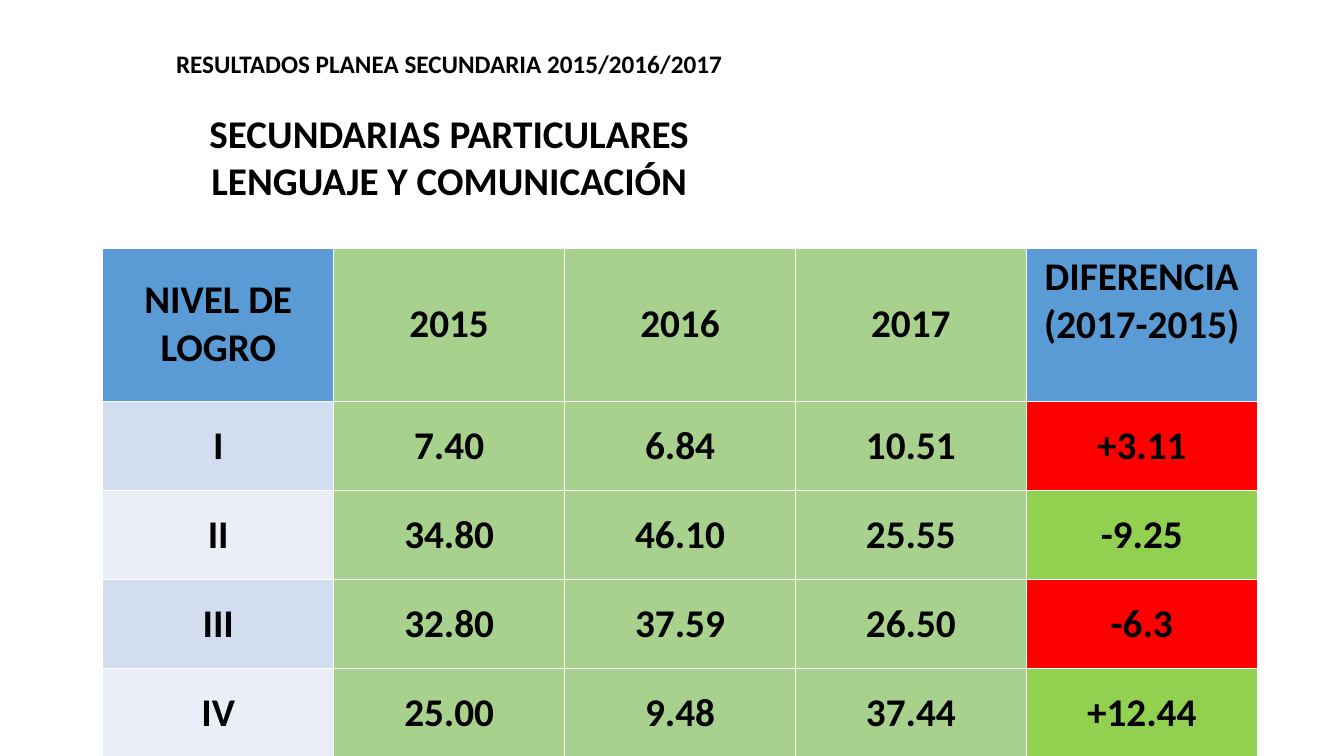
from pptx import Presentation
from pptx import util as u
from pptx.dml.color import RGBColor
from pptx.enum import text

SLIDE_W, SLIDE_H = u.Inches(13.33), u.Inches(7.5)
LEFT = u.Inches(1.02)
COLUMN_W = u.Inches(2.29)
HEADER_H, LEVEL_H = u.Inches(1.52), u.Inches(0.885)

BLACK = RGBColor(0x00, 0x00, 0x00)
BLUE = RGBColor(0x5B, 0x9B, 0xD5)
BANDS = RGBColor(0xD2, 0xDE, 0xEF), RGBColor(0xEA, 0xEF, 0xF7)
YEAR_GREEN = RGBColor(0xA9, 0xD1, 0x8E)
BETTER = RGBColor(0x92, 0xD0, 0x50)
WORSE = RGBColor(0xFF, 0x00, 0x00)

HEADING = [
    ("RESULTADOS PLANEA SECUNDARIA 2015/2016/2017", 18),
    ("SECUNDARIAS PARTICULARES", 28),
    ("LENGUAJE Y COMUNICACIÓN", 28),
]
HEADER = ["NIVEL DE LOGRO", "2015", "2016", "2017", "DIFERENCIA\n(2017-2015)"]
LEVELS = [
    (["I", "7.40", "6.84", "10.51", "+3.11"], WORSE),
    (["II", "34.80", "46.10", "25.55", "-9.25"], BETTER),
    (["III", "32.80", "37.59", "26.50", "-6.3"], WORSE),
    (["IV", "25.00", "9.48", "37.44", "+12.44"], BETTER),
]


def format_line(paragraph, size):
    paragraph.alignment = text.PP_ALIGN.CENTER
    for run in paragraph.runs:
        run.font.name = "Calibri"
        run.font.size = u.Pt(size)
        run.font.bold = True
        run.font.color.rgb = BLACK


def place_heading(slide):
    heading = slide.shapes.title
    heading.left, heading.top = LEFT, u.Inches(0.43)
    heading.width, heading.height = 3 * COLUMN_W, u.Inches(1.65)
    frame = heading.text_frame
    frame.text = "\n".join(line for line, _ in HEADING)
    frame.word_wrap = True
    frame.auto_size = text.MSO_AUTO_SIZE.NONE
    frame.vertical_anchor = text.MSO_ANCHOR.TOP
    for paragraph, (_, size) in zip(frame.paragraphs, HEADING):
        format_line(paragraph, size)
    frame.paragraphs[1].space_before = u.Pt(22)


def fill_row(cells, values, fills):
    for cell, value, fill in zip(cells, values, fills):
        cell.text_frame.text = value
        cell.vertical_anchor = text.MSO_ANCHOR.MIDDLE
        cell.fill.solid()
        cell.fill.fore_color.rgb = fill
        for paragraph in cell.text_frame.paragraphs:
            format_line(paragraph, 28)


def add_results(slide):
    height = HEADER_H + len(LEVELS) * LEVEL_H
    results = slide.shapes.add_table(
        len(LEVELS) + 1, len(HEADER), LEFT, u.Inches(2.46),
        len(HEADER) * COLUMN_W, height).table
    for column in results.columns:
        column.width = COLUMN_W
    header_row, *level_rows = results.rows

    header_row.height = HEADER_H
    fill_row(header_row.cells, HEADER, [BLUE, *[YEAR_GREEN] * 3, BLUE])
    results.cell(0, len(HEADER) - 1).margin_bottom = u.Inches(0.52)

    for index, (row, (values, verdict)) in enumerate(zip(level_rows, LEVELS)):
        row.height = LEVEL_H
        fill_row(row.cells, values, [BANDS[index % 2], *[YEAR_GREEN] * 3, verdict])


def main():
    deck = Presentation()
    deck.slide_width, deck.slide_height = SLIDE_W, SLIDE_H
    slide = deck.slides.add_slide(deck.slide_layouts.get_by_name("Title Only"))
    place_heading(slide)
    add_results(slide)
    deck.save("out.pptx")


if __name__ == "__main__":
    main()
